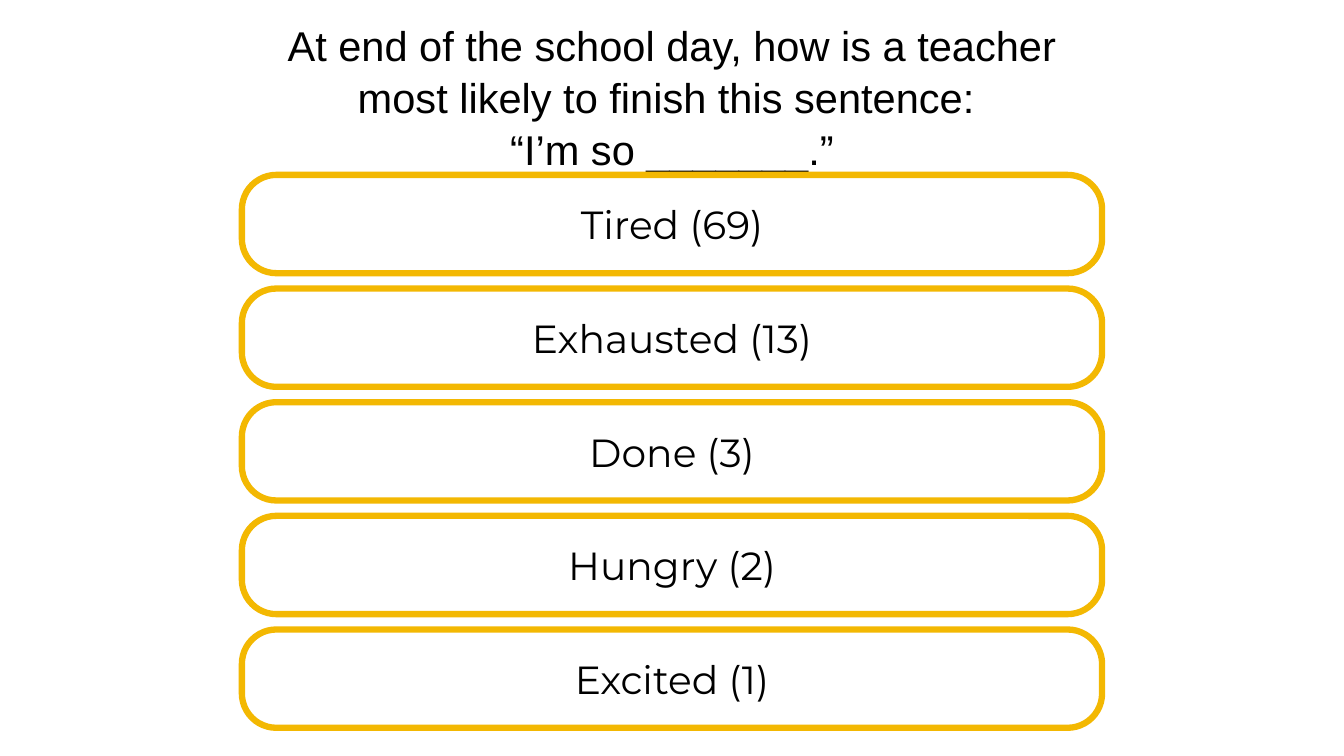
from typing import NamedTuple

from pptx import Presentation
from pptx.dml.color import RGBColor
from pptx.enum import shapes, text
from pptx.util import Inches, Pt


class Answer(NamedTuple):
    word: str
    count: int


ANSWERS = [
    Answer("Tired", 69),
    Answer("Exhausted", 13),
    Answer("Done", 3),
    Answer("Hungry", 2),
    Answer("Excited", 1),
]
LEFT, WIDTH = 4.8, 17.07
TOP, HEIGHT, STEP = 3.47, 1.95, 2.255


def color(code: str) -> RGBColor:
    return RGBColor.from_string(code)


def write(shape, words: str, *, font: str, size: float, ink: str = "000000",
          space: float = 1.0) -> None:
    """Fill a shape with centred text; \\v marks a line break."""
    frame = shape.text_frame
    frame.word_wrap = True
    frame.vertical_anchor = text.MSO_ANCHOR.MIDDLE
    frame.margin_left = frame.margin_right = Inches(0.08)
    frame.margin_top = frame.margin_bottom = Inches(0.08)
    para = frame.paragraphs[0]
    para.text = words
    para.alignment = text.PP_ALIGN.CENTER
    para.line_spacing = space
    for run in para.runs:
        run.font.name = font
        run.font.size = Pt(size)
        run.font.color.rgb = color(ink)


def draw_answer(slide, answer: Answer, top: float) -> None:
    box = slide.shapes.add_shape(
        shapes.MSO_SHAPE.ROUNDED_RECTANGLE,
        Inches(LEFT), Inches(top), Inches(WIDTH), Inches(HEIGHT))
    box.adjustments[0] = 0.35
    box.shadow.inherit = False
    box.fill.solid()
    box.fill.fore_color.rgb = color("FFFFFF")
    box.line.color.rgb = color("F3B802")
    box.line.width = Pt(9)
    write(box, f"{answer.word} ({answer.count})", font="Montserrat", size=56)


def main() -> None:
    deck = Presentation()
    deck.slide_width, deck.slide_height = Inches(26.67), Inches(15)
    slide = deck.slides.add_slide(deck.slide_layouts[6])

    # Question
    title = slide.shapes.add_textbox(
        Inches(LEFT), Inches(0.33), Inches(WIDTH), Inches(3.16))
    write(title, "At end of the school day, how is a teacher most likely "
          "to finish this sentence: \v“I’m so _______.”",
          font="Arial", size=59.4, space=1.04)

    # Ranked answers
    for i, answer in enumerate(ANSWERS):
        draw_answer(slide, answer, TOP + i * STEP)

    deck.save("out.pptx")


if __name__ == "__main__":
    main()
